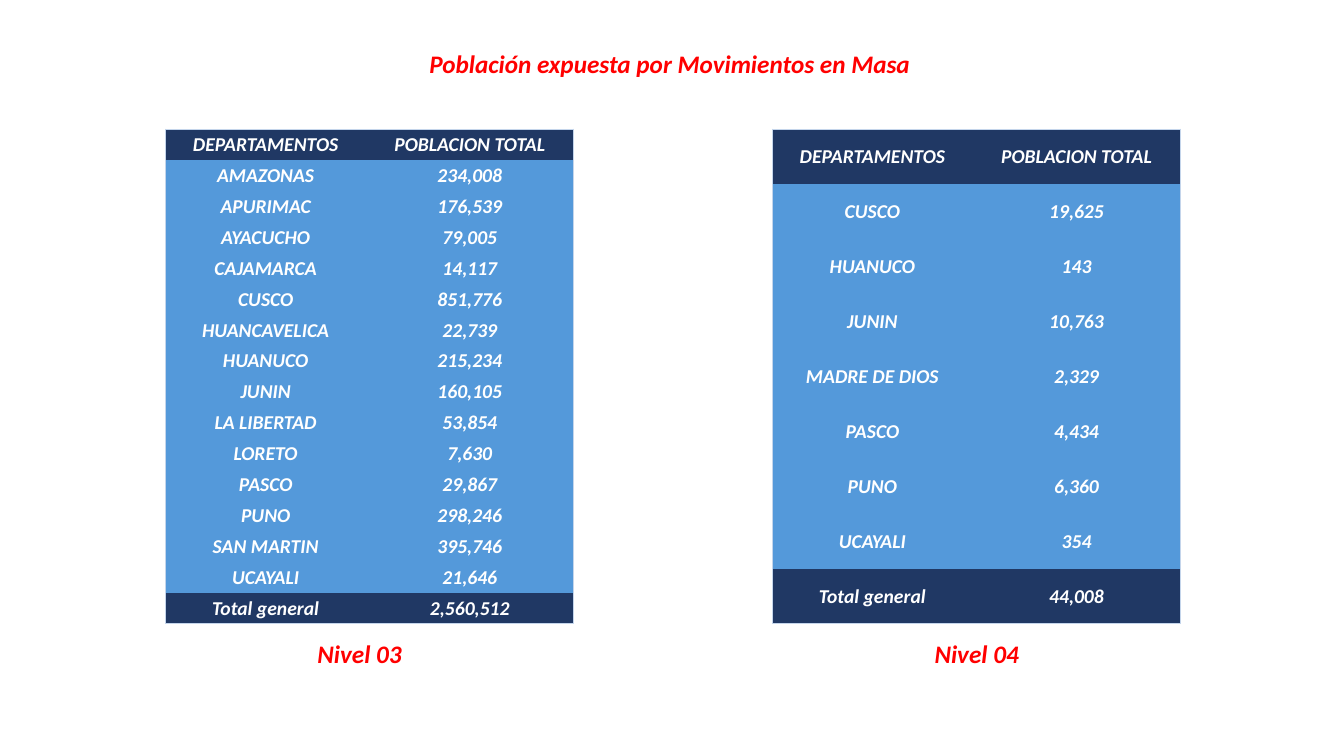
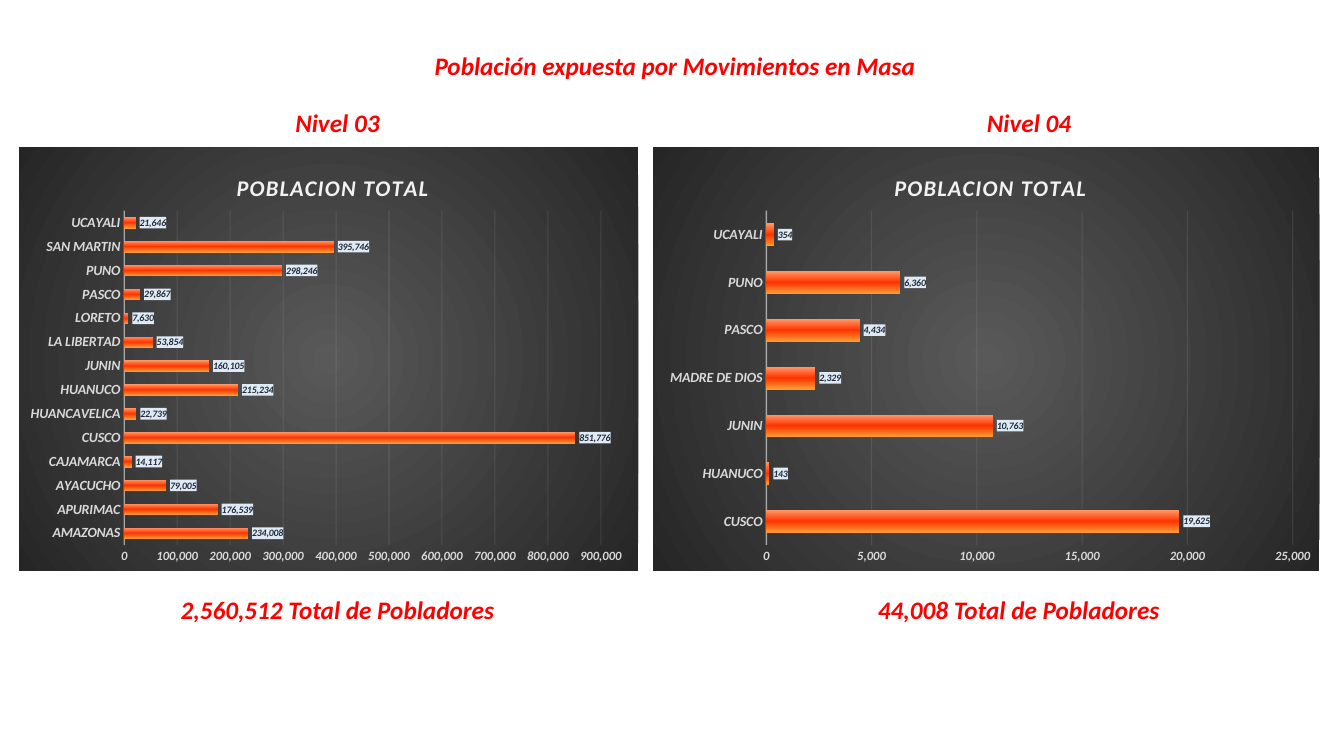
from lxml.etree import SubElement
from pptx import Presentation
from pptx.chart.data import CategoryChartData
from pptx.dml.color import RGBColor
from pptx.enum.chart import XL_CHART_TYPE as ChartType, XL_LABEL_POSITION as LabelPosition, XL_TICK_MARK as TickMark
from pptx.enum.text import MSO_ANCHOR as Anchor, PP_ALIGN as Align
from pptx.oxml import parse_xml
from pptx.oxml.ns import nsdecls, qn
from pptx.util import Cm, Pt

TITLE = "Población expuesta por Movimientos en Masa"
HEADERS = ("DEPARTAMENTOS", "POBLACION TOTAL")
LEVELS = [
    {
        "name": "Nivel 03",
        "rows": [
            ("AMAZONAS", 234008), ("APURIMAC", 176539), ("AYACUCHO", 79005),
            ("CAJAMARCA", 14117), ("CUSCO", 851776), ("HUANCAVELICA", 22739),
            ("HUANUCO", 215234), ("JUNIN", 160105), ("LA LIBERTAD", 53854),
            ("LORETO", 7630), ("PASCO", 29867), ("PUNO", 298246),
            ("SAN MARTIN", 395746), ("UCAYALI", 21646),
        ],
        "table_left": 4.17, "caption_left": 7.67,
        "chart_left": 0.48, "chart_width": 15.6, "plot_width": 0.77,
        "heading_left": 7.11, "total_left": 4.24,
        "axis_max": 900000, "axis_step": 100000,
    },
    {
        "name": "Nivel 04",
        "rows": [
            ("CUSCO", 19625), ("HUANUCO", 143), ("JUNIN", 10763),
            ("MADRE DE DIOS", 2329), ("PASCO", 4434), ("PUNO", 6360),
            ("UCAYALI", 354),
        ],
        "table_left": 19.46, "caption_left": 23.22,
        "chart_left": 16.46, "chart_width": 16.79, "plot_width": 0.79,
        "heading_left": 24.54, "total_left": 21.41,
        "axis_max": 25000, "axis_step": 5000,
    },
]

FONT = "Calibri"
RED = RGBColor(0xFF, 0x00, 0x00)
WHITE = RGBColor(0xFF, 0xFF, 0xFF)
NAVY = RGBColor(0x20, 0x38, 0x64)
BLUE = RGBColor(0x54, 0x99, 0xDA)
EDGE = RGBColor(0xC4, 0xD5, 0xEB)
PALE = RGBColor(0xF2, 0xF2, 0xF2)
SILVER = RGBColor(0xD9, 0xD9, 0xD9)
LABEL_TEXT = RGBColor(0x22, 0x2A, 0x35)
LABEL_FILL = RGBColor(0xDE, 0xEB, 0xF7)
BAR_STOPS = [(0, RGBColor(0xFF, 0x99, 0x66)), (50, RGBColor(0xFF, 0x33, 0x00)), (100, RGBColor(0xFF, 0x99, 0x33))]
AREA_STOPS = [(0, RGBColor(0x59, 0x59, 0x59)), (100, RGBColor(0x26, 0x26, 0x26))]
DOWNWARD = '<a:lin ang="5400000" scaled="0"/>'
RADIAL = '<a:path path="circle"><a:fillToRect l="50000" t="50000" r="50000" b="50000"/></a:path>'
NO_STYLE = "{2D5ABB26-0587-4C30-8999-92F81FD0307C}"

TABLE_TOP, TABLE_HEIGHT, COLUMN_WIDTHS = 3.25, 12.47, (5.05, 5.24)
CHART_TOP, CHART_HEIGHT = 3.71, 10.67
CHART_TITLE_WIDTH = 4.84


def style_font(font, size, color):
    font.name, font.size, font.bold, font.italic = FONT, Pt(size), True, True
    font.color.rgb = color


def write_text(frame, text, size=18, color=RED, spacing=None):
    para = frame.paragraphs[0]
    para.alignment = Align.CENTER
    span = para.add_run()
    span.text = text
    style_font(span.font, size, color)
    if spacing:
        span.font._element.set("spc", str(spacing))


def add_label(page, text, left, top, width, wrap=True):
    box = page.shapes.add_textbox(Cm(left), Cm(top), Cm(width), Cm(1.02))
    box.text_frame.word_wrap = wrap
    write_text(box.text_frame, text)


def add_page(deck, title_left, title_top):
    page = deck.slides.add_slide(deck.slide_layouts[6])
    add_label(page, TITLE, title_left, title_top, 12.78, wrap=False)
    return page


def total(level):
    return f"{sum(value for _, value in level['rows']):,}"


def add_borders(cell, sides):
    for side in sides:
        cell._tc.get_or_add_tcPr().append(parse_xml(
            f'<a:ln{side} {nsdecls("a")} w="6350"><a:solidFill>'
            f'<a:srgbClr val="{EDGE}"/></a:solidFill></a:ln{side}>'))


def add_level_table(page, level):
    body = [(name, f"{value:,}") for name, value in level["rows"]]
    rows = [HEADERS, *body, ("Total general", total(level))]
    last = len(rows) - 1
    table = page.shapes.add_table(
        len(rows), 2, Cm(level["table_left"]), Cm(TABLE_TOP),
        Cm(sum(COLUMN_WIDTHS)), Cm(TABLE_HEIGHT)).table
    table.first_row = table.horz_banding = False
    table._tbl.tblPr.find(qn("a:tableStyleId")).text = NO_STYLE
    for column, width in zip(table.columns, COLUMN_WIDTHS):
        column.width = Cm(width)
    for r, texts in enumerate(rows):
        table.rows[r].height = Cm(TABLE_HEIGHT / len(rows))
        for c, text in enumerate(texts):
            cell = table.cell(r, c)
            cell.margin_left = cell.margin_right = cell.margin_top = Cm(0.02)
            cell.margin_bottom = 0
            cell.vertical_anchor = Anchor.MIDDLE
            add_borders(cell, "LR"[c] + ("T" if r == 0 else "B" if r == last else ""))
            cell.fill.solid()
            cell.fill.fore_color.rgb = NAVY if r in (0, last) else BLUE
            write_text(cell.text_frame, text, size=14, color=WHITE)


def gradient(stops, direction):
    marks = "".join(f'<a:gs pos="{pos * 1000}"><a:srgbClr val="{color}"/></a:gs>' for pos, color in stops)
    return f"<a:gradFill><a:gsLst>{marks}</a:gsLst>{direction}</a:gradFill>"


def shape_format(fill):
    return parse_xml(f'<c:spPr {nsdecls("c", "a")}>{fill}<a:ln><a:noFill/></a:ln></c:spPr>')


def manual_layout(x, y, size=None):
    parts = [("xMode", "edge"), ("yMode", "edge"), ("x", x), ("y", y)]
    if size:
        parts = [("layoutTarget", "inner"), *parts, ("w", size[0]), ("h", size[1])]
    inner = "".join(f'<c:{tag} val="{value}"/>' for tag, value in parts)
    return parse_xml(f'<c:layout {nsdecls("c")}><c:manualLayout>{inner}</c:manualLayout></c:layout>')


def set_layout(element, layout, before=None):
    for old in element.findall(qn("c:layout")):
        element.remove(old)
    if before is None:
        element.insert(0, layout)
    else:
        element.find(qn(before)).addprevious(layout)


def style_line(line, width, opacity):
    line.width = Pt(width)
    line.color.rgb = PALE
    color = line._get_or_add_ln().find(".//" + qn("a:srgbClr"))
    SubElement(color, qn("a:alpha")).set("val", str(opacity * 1000))


def style_axes(chart, level):
    names, values = chart.category_axis, chart.value_axis
    for axis, size in ((names, 10), (values, 9)):
        axis.major_tick_mark = axis.minor_tick_mark = TickMark.NONE
        style_font(axis.tick_labels.font, size, SILVER)
    style_line(names.format.line, 1, 54)
    values.format.line.fill.background()
    values.minimum_scale, values.maximum_scale = 0, level["axis_max"]
    values.major_unit = level["axis_step"]
    values.has_major_gridlines = True
    style_line(values.major_gridlines.format.line, 0.75, 10)
    values.tick_labels.number_format = "#,##0"
    values.tick_labels.number_format_is_linked = False


def style_bars(plot):
    plot.gap_width, plot.overlap, plot.vary_by_categories = 115, -20, False
    bars = plot.series[0]
    bars._element.get_or_add_spPr().append(parse_xml(
        gradient(BAR_STOPS, DOWNWARD).replace("<a:gradFill>", f'<a:gradFill {nsdecls("a")}>')))
    labels = bars.data_labels
    labels.show_value = True
    labels.position = LabelPosition.OUTSIDE_END
    labels.number_format, labels.number_format_is_linked = "#,##0", False
    style_font(labels.font, 7, LABEL_TEXT)
    fill = f'<a:solidFill><a:srgbClr val="{LABEL_FILL}"/></a:solidFill>'
    labels._element.find(qn("c:txPr")).addprevious(shape_format(fill))


def add_level_chart(page, level):
    data = CategoryChartData(number_format="#,##0")
    data.categories = [name for name, _ in level["rows"]]
    data.add_series(HEADERS[1], [value for _, value in level["rows"]])
    width = level["chart_width"]
    chart = page.shapes.add_chart(
        ChartType.BAR_CLUSTERED, Cm(level["chart_left"]), Cm(CHART_TOP),
        Cm(width), Cm(CHART_HEIGHT), data).chart
    chart.has_legend = False
    chart.font.name, chart.font.size = FONT, Pt(10)
    chart.has_title = True
    title = chart.chart_title
    write_text(title.text_frame, HEADERS[1], size=16, color=PALE, spacing=100)
    title.include_in_layout = False
    title_x = round(0.5 - CHART_TITLE_WIDTH / width / 2, 3)
    set_layout(title._element, manual_layout(title_x, 0.05), before="c:overlay")
    style_axes(chart, level)
    style_bars(chart.plots[0])
    area = chart.element.find(qn("c:chart"))
    set_layout(area.find(qn("c:plotArea")), manual_layout(0.17, 0.15, (level["plot_width"], 0.79)))
    area.addnext(shape_format(gradient(AREA_STOPS, RADIAL)))


def main():
    deck = Presentation()
    deck.slide_width, deck.slide_height = Cm(33.87), Cm(19.05)
    table_page = add_page(deck, 10.49, 1.09)
    chart_page = add_page(deck, 10.62, 1.14)
    for level in LEVELS:
        add_level_table(table_page, level)
        add_label(table_page, level["name"], level["caption_left"], 15.95, 2.79)
        add_level_chart(chart_page, level)
        add_label(chart_page, level["name"], level["heading_left"], 2.57, 2.79)
        add_label(chart_page, f"{total(level)} Total de Pobladores", level["total_left"], 14.86, 8.53)
    deck.save("out.pptx")


if __name__ == "__main__":
    main()
